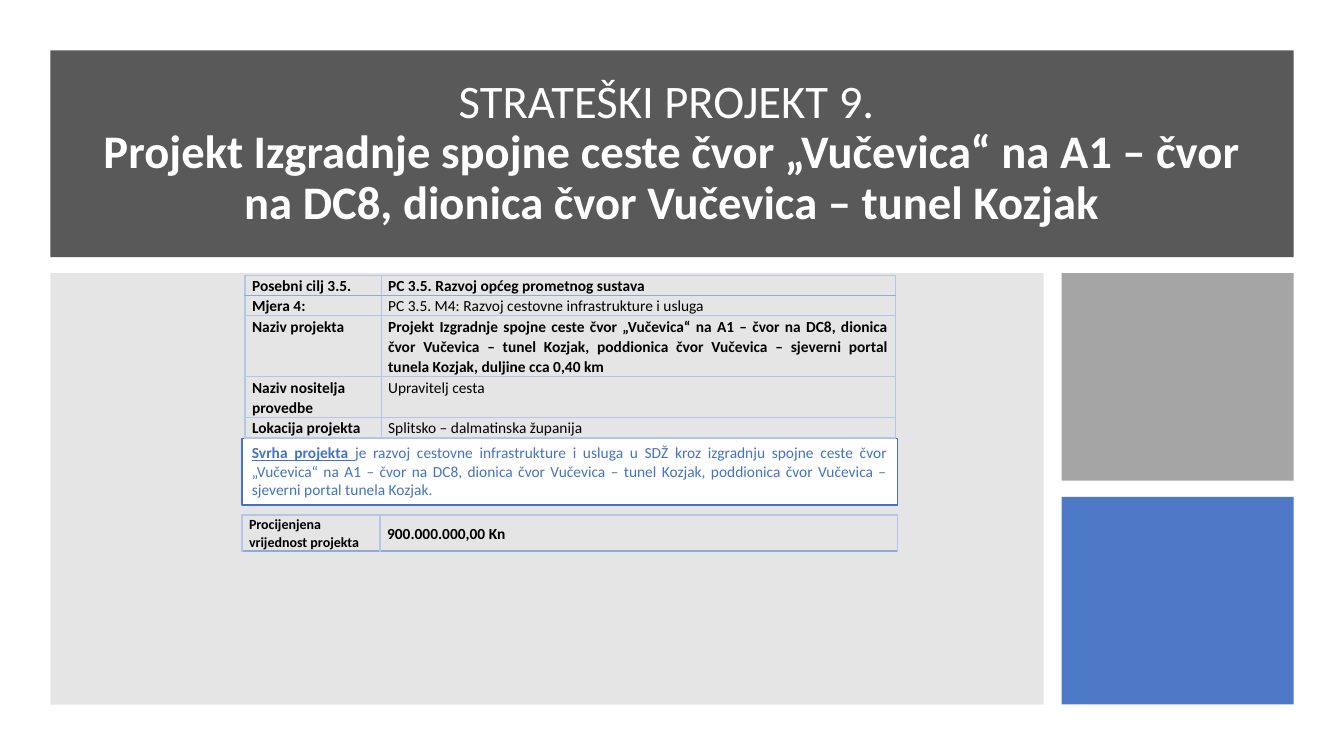
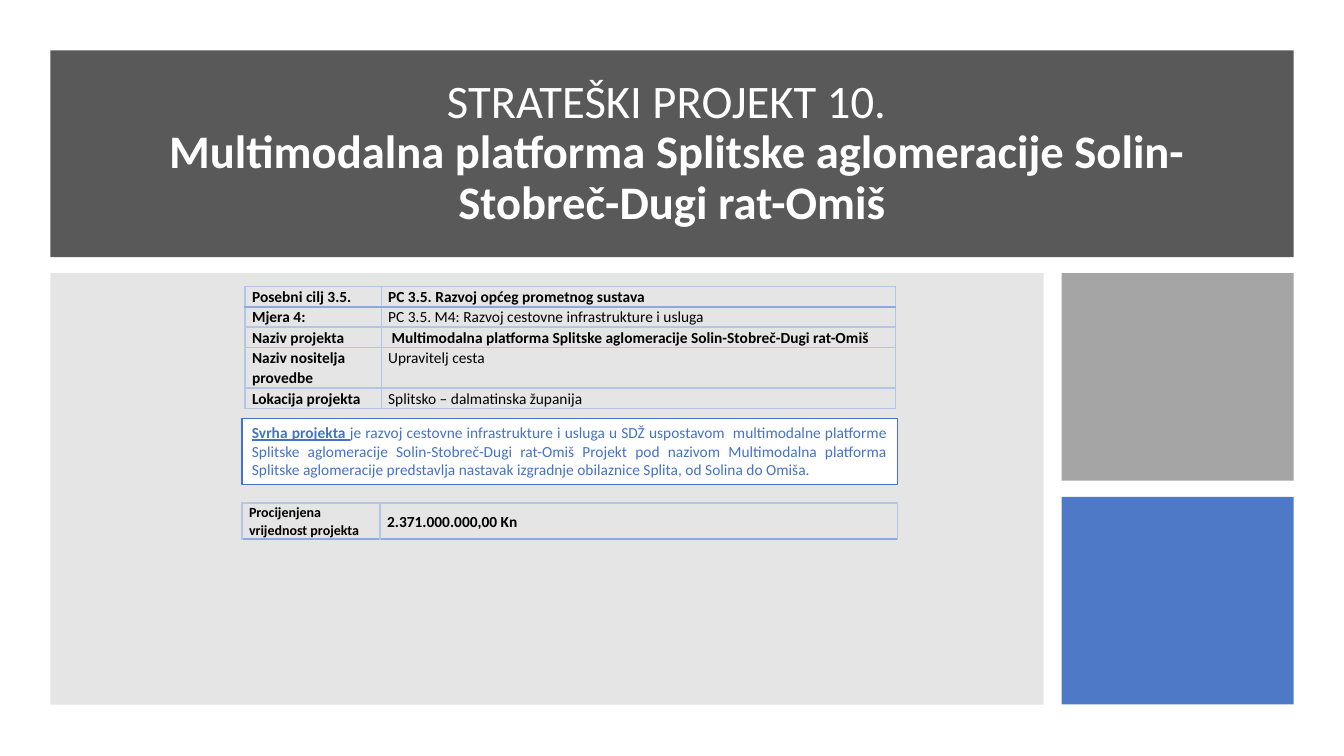
from dataclasses import dataclass

from lxml import etree
from pptx import Presentation
from pptx.dml.color import RGBColor
from pptx.enum.shapes import MSO_SHAPE
from pptx.enum.text import MSO_ANCHOR, MSO_AUTO_SIZE, PP_ALIGN
from pptx.oxml.ns import qn
from pptx.util import Inches, Pt

RECT = MSO_SHAPE.RECTANGLE
TOP, MIDDLE = MSO_ANCHOR.TOP, MSO_ANCHOR.MIDDLE
NO_FIT = MSO_AUTO_SIZE.NONE
LEFT, CENTER, JUSTIFY = PP_ALIGN.LEFT, PP_ALIGN.CENTER, PP_ALIGN.JUSTIFY
TITLE_ONLY = 5


@dataclass(frozen=True)
class Theme:
    font: str = "Calibri"
    white: str = "FFFFFF"
    black: str = "000000"
    band: str = "595959"
    panel: str = "808080"
    grey: str = "A5A5A5"
    blue: str = "4472C4"
    border: str = "B4C6E7"
    rule: str = "8EAADB"
    title: float = 33.3
    body: float = 11
    small: float = 10


@dataclass(frozen=True)
class Box:
    left: float
    top: float
    width: float
    height: float

    def emu(self):
        return [Inches(v) for v in (self.left, self.top, self.width, self.height)]

    def inset(self, dx, dy):
        return Box(self.left + dx, self.top + dy,
                   self.width - 2 * dx, self.height - 2 * dy)


@dataclass(frozen=True)
class Project:
    number: int
    title: str
    name: str
    purpose: str
    value: str
    facts_top: float
    purpose_top: float
    value_top: float


THEME = Theme()
BAND = Box(0.5, 0.5, 12.33, 2.05)
PANEL = Box(0.5, 2.71, 9.85, 4.28)
TILE_LEFT, TILE_WIDTH, TILE_HEIGHT, GAP = 10.53, 2.3, 2.06, 0.16
CONTENT_LEFT, CONTENT_WIDTH = 2.4, 6.5
ROW_HEIGHT = 0.19

PROJECTS = [
    Project(
        9,
        "Projekt Izgradnje spojne ceste čvor „Vučevica“ na A1 – čvor na DC8, "
        "dionica čvor Vučevica – tunel Kozjak",
        "Projekt Izgradnje spojne ceste čvor „Vučevica“ na A1 – čvor na DC8, "
        "dionica čvor Vučevica – tunel Kozjak, poddionica čvor Vučevica – "
        "sjeverni portal tunela Kozjak, duljine cca 0,40 km",
        "je razvoj cestovne infrastrukture i usluga u SDŽ kroz izgradnju spojne "
        "ceste čvor „Vučevica“ na A1 – čvor na DC8, dionica čvor Vučevica – tunel "
        "Kozjak, poddionica čvor Vučevica – sjeverni portal tunela Kozjak.",
        "900.000.000,00 Kn", 2.73, 4.35, 5.11),
    Project(
        10,
        " Multimodalna platforma Splitske aglomeracije Solin-Stobreč-Dugi rat-Omiš",
        " Multimodalna platforma Splitske aglomeracije Solin-Stobreč-Dugi rat-Omiš",
        "je razvoj cestovne infrastrukture i usluga u SDŽ uspostavom  multimodalne "
        "platforme Splitske aglomeracije Solin-Stobreč-Dugi rat-Omiš Projekt pod "
        "nazivom Multimodalna platforma Splitske aglomeracije predstavlja nastavak "
        "izgradnje obilaznice Splita, od Solina do Omiša.",
        "2.371.000.000,00 Kn", 2.84, 4.15, 4.99),
]


def style(font, size, color, bold=False):
    font.name = THEME.font
    font.size = Pt(size)
    font.bold = bold
    font.color.rgb = RGBColor.from_string(color)


def add_rect(slide, box, color, alpha=100, line=None):
    sp = slide.shapes.add_shape(RECT, *box.emu())
    sp.shadow.inherit = False
    sp.fill.solid()
    sp.fill.fore_color.rgb = RGBColor.from_string(color)
    if alpha < 100:
        clr = sp.fill._xPr.find(qn("a:solidFill"))[0]
        etree.SubElement(clr, qn("a:alpha"), val=str(alpha * 1000))
    if line:
        sp.line.color.rgb = RGBColor.from_string(line)
        sp.line.width = Pt(1)
    else:
        sp.line.fill.background()
    return sp


def set_border(cell, side, color, width):
    ln = etree.SubElement(cell._tc.get_or_add_tcPr(), qn(f"a:ln{side}"),
                          w=str(Pt(width)))
    fill = etree.SubElement(ln, qn("a:solidFill"))
    etree.SubElement(fill, qn("a:srgbClr"), val=color)


def fill_cell(cell, text, size, bold, align, anchor, ruled):
    for side in "LRTB":
        if side in ruled:
            set_border(cell, side, THEME.rule, 1.5)
        else:
            set_border(cell, side, THEME.border, 1)
    cell.fill.background()
    cell.margin_left = cell.margin_right = Inches(0.07)
    cell.margin_top = cell.margin_bottom = 0
    cell.vertical_anchor = anchor
    p = cell.text_frame.paragraphs[0]
    p.text = text
    p.alignment = align
    p.line_spacing = 1.07
    style(p.font, size, THEME.black, bold)


def add_grid(slide, box, label_width, rows):
    table = slide.shapes.add_table(rows, 2, *box.emu()).table
    table.first_row = table.horz_banding = False
    table.columns[0].width = Inches(label_width)
    table.columns[1].width = Inches(box.width - label_width)
    return table


def add_title(slide, box, project):
    add_rect(slide, box, THEME.band)
    title = slide.shapes.title
    slide.shapes._spTree.append(title._element)
    title.left, title.top, title.width, title.height = box.inset(0.33, 0.24).emu()
    tf = title.text_frame
    tf.word_wrap = True
    tf.auto_size = NO_FIT
    tf.vertical_anchor = MIDDLE
    lines = [(f"STRATEŠKI PROJEKT {project.number}. ", False), (project.title, True)]
    for i, (text, bold) in enumerate(lines):
        p = tf.add_paragraph() if i else tf.paragraphs[0]
        p.text = text
        p.alignment = CENTER
        p.line_spacing = 0.9
        style(p.font, THEME.title, THEME.white, bold)


def add_panels(slide, box):
    add_rect(slide, box, THEME.panel, alpha=20)
    for i, (color, alpha) in enumerate([(THEME.grey, 100), (THEME.blue, 95)]):
        top = box.top + i * (TILE_HEIGHT + GAP)
        add_rect(slide, Box(TILE_LEFT, top, TILE_WIDTH, TILE_HEIGHT), color, alpha)


def add_purpose(slide, box, text):
    tf = add_rect(slide, box, THEME.white, line=THEME.blue).text_frame
    tf.word_wrap = True
    tf.vertical_anchor = TOP
    p = tf.paragraphs[0]
    p.alignment = JUSTIFY
    style(p.font, THEME.body, THEME.blue)
    lead = p.add_run()
    lead.text = "Svrha projekta "
    lead.font.bold = lead.font.underline = True
    p.add_run().text = text


def add_value(slide, box, value):
    table = add_grid(slide, box, 1.37, 1)
    fill_cell(table.cell(0, 0), "Procijenjena vrijednost projekta ", THEME.small,
              True, LEFT, TOP, "B")
    fill_cell(table.cell(0, 1), value, THEME.body, True, JUSTIFY, MIDDLE, "B")


def add_facts(slide, box, name):
    facts = [
        ("Posebni cilj 3.5.", "PC 3.5. Razvoj općeg prometnog sustava", True),
        ("Mjera 4:", "PC 3.5. M4: Razvoj cestovne infrastrukture i usluga", False),
        ("Naziv projekta", name, True),
        ("Naziv nositelja provedbe", "Upravitelj cesta", False),
        ("Lokacija projekta", "Splitsko – dalmatinska županija", False),
    ]
    table = add_grid(slide, box, 1.35, len(facts))
    for i, (label, text, bold) in enumerate(facts):
        ruled = {0: "B", 1: "T"}.get(i, "")
        fill_cell(table.cell(i, 0), label, THEME.body, True, LEFT, TOP, ruled)
        fill_cell(table.cell(i, 1), text, THEME.body, bold, JUSTIFY, TOP, ruled)


def add_project(prs, project):
    slide = prs.slides.add_slide(prs.slide_layouts[TITLE_ONLY])
    add_title(slide, BAND, project)
    add_panels(slide, PANEL)
    add_purpose(slide, Box(CONTENT_LEFT, project.purpose_top, CONTENT_WIDTH, 0.66),
                project.purpose)
    add_value(slide, Box(CONTENT_LEFT, project.value_top, CONTENT_WIDTH, 0.35),
              project.value)
    add_facts(slide, Box(CONTENT_LEFT + 0.03, project.facts_top,
                         CONTENT_WIDTH - 0.05, 5 * ROW_HEIGHT), project.name)


def main():
    prs = Presentation()
    prs.slide_width, prs.slide_height = Inches(13.33), Inches(7.5)
    for project in PROJECTS:
        add_project(prs, project)
    prs.save("out.pptx")


if __name__ == "__main__":
    main()
